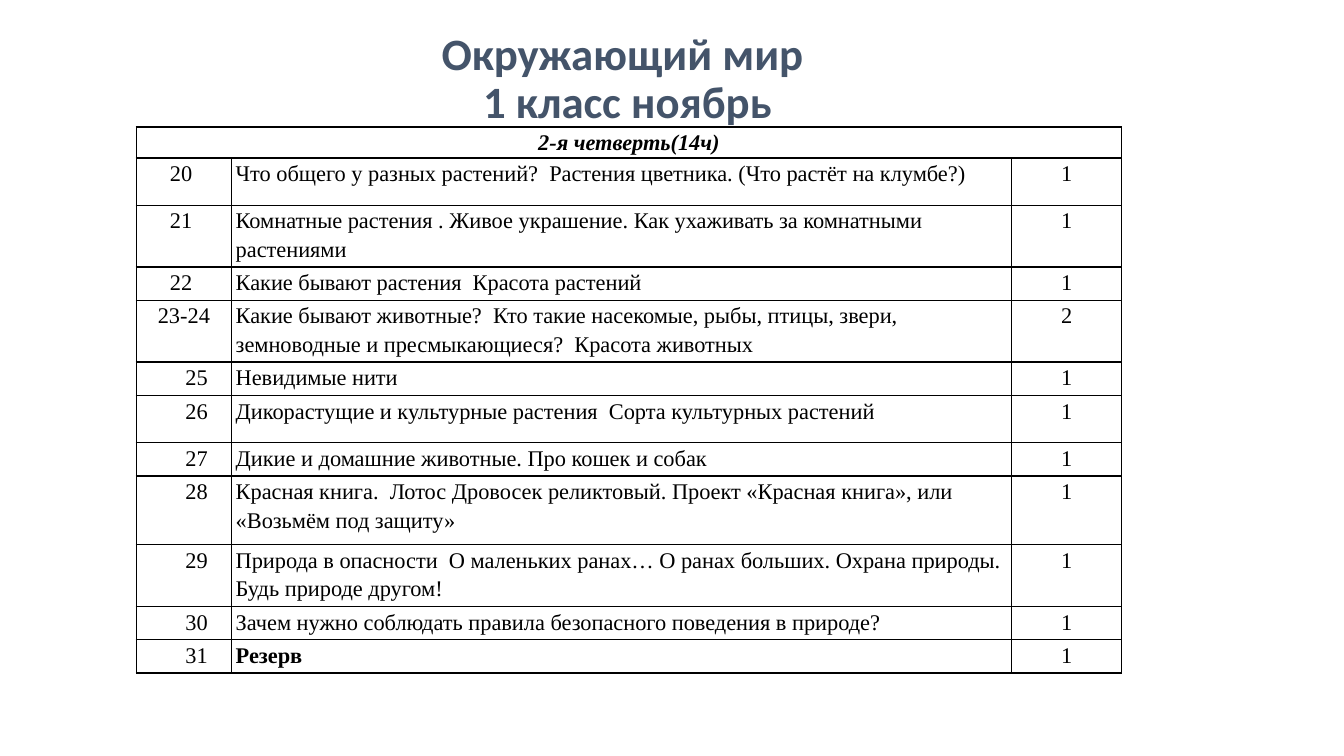
from dataclasses import dataclass

from lxml import etree
from pptx import Presentation
from pptx.dml.color import RGBColor
from pptx.enum.text import MSO_ANCHOR, PP_ALIGN
from pptx.oxml.ns import qn
from pptx.util import Cm, Pt

LEFT, CENTER = PP_ALIGN.LEFT, PP_ALIGN.CENTER
MIDDLE = MSO_ANCHOR.MIDDLE


@dataclass(frozen=True)
class Theme:
    title: str = "44546A"
    ink: str = "000000"
    head: str = "Calibri"
    body: str = "Times New Roman"
    big: int = 32
    small: int = 16
    rule: int = 1


@dataclass(frozen=True)
class Lesson:
    num: str
    topic: str
    hours: str = "1"
    high: float = 0.84
    shift: float = 0
    bold: bool = False


THEME = Theme()
SHIFT = 0.64
WIDTHS = (2.41, 19.66, 2.77)
TITLE = ("Окружающий мир ", "1 класс ноябрь")
TERM = "2-я четверть(14ч)"
LESSONS = (
    Lesson("20 ", "Что общего у разных растений?  Растения цветника. "
           "(Что растёт на клумбе?)", high=1.19),
    Lesson("21 ", "Комнатные растения . Живое украшение. "
           "Как ухаживать за комнатными растениями"),
    Lesson("22 ", "Какие бывают растения  Красота растений"),
    Lesson("23-24", "Какие бывают животные?  Кто такие насекомые, рыбы, птицы, "
           "звери, земноводные и пресмыкающиеся?  Красота животных", "2", 1.19),
    Lesson("25", "Невидимые нити", shift=SHIFT),
    Lesson("26", "Дикорастущие и культурные растения  Сорта культурных растений",
           high=1.19, shift=SHIFT),
    Lesson("27", "Дикие и домашние животные. Про кошек и собак", shift=SHIFT),
    Lesson("28", "Красная книга.  Лотос Дровосек реликтовый. "
           "Проект «Красная книга», или «Возьмём под защиту»",
           high=1.73, shift=SHIFT),
    Lesson("29", "Природа в опасности  О маленьких ранах… О ранах больших. "
           "Охрана природы. Будь природе другом!", high=1.4, shift=SHIFT),
    Lesson("30", "Зачем нужно соблюдать правила безопасного поведения в природе?",
           shift=SHIFT),
    Lesson("31", "Резерв", shift=SHIFT, bold=True),
)


def add_run(para, text: str, face: str, size: int, color: str,
            bold: bool = False, slant: bool = False) -> None:
    run = para.add_run()
    run.text = text
    font = run.font
    font.name, font.size = face, Pt(size)
    font.bold, font.italic = bold, slant
    font.color.rgb = RGBColor.from_string(color)


def add_rules(cell) -> None:
    props = cell._tc.get_or_add_tcPr()
    for side in ("a:lnL", "a:lnR", "a:lnT", "a:lnB"):
        line = etree.SubElement(props, qn(side), w=str(Pt(THEME.rule)))
        fill = etree.SubElement(line, qn("a:solidFill"))
        etree.SubElement(fill, qn("a:srgbClr"), val=THEME.ink)


def fill_cell(cell, text: str, align=CENTER, shift: float = 0,
              bold: bool = False, slant: bool = False) -> None:
    cell.margin_left = cell.margin_right = Cm(0.1)
    cell.margin_top = cell.margin_bottom = Cm(0)
    para = cell.text_frame.paragraphs[0]
    para.alignment = align
    para.line_spacing = 1.15
    para.space_after = Pt(10)
    if shift:
        props = para._p.get_or_add_pPr()
        props.set("marL", str(Cm(shift)))
        props.set("indent", "0")
    add_run(para, text, THEME.body, THEME.small, THEME.ink, bold, slant)


def add_title(slide) -> None:
    box = slide.shapes.add_textbox(Cm(7.49), Cm(0.18), Cm(16.66), Cm(3.68))
    frame = box.text_frame
    frame.word_wrap = True
    frame.vertical_anchor = MIDDLE
    para = frame.paragraphs[0]
    para.alignment = CENTER
    para.line_spacing = 0.9
    for i, text in enumerate(TITLE):
        if i:
            para.add_line_break()
        add_run(para, text, THEME.head, THEME.big, THEME.title, bold=True)


def add_plan(slide) -> None:
    highs = [0.3] + [item.high for item in LESSONS]
    table = slide.shapes.add_table(
        len(highs), len(WIDTHS), Cm(3.43), Cm(3.2),
        Cm(sum(WIDTHS)), Cm(sum(highs))).table
    table.first_row = table.horz_banding = False
    for col, width in zip(table.columns, WIDTHS):
        col.width = Cm(width)
    for row, high in zip(table.rows, highs):
        row.height = Cm(high)
    for cell in table.iter_cells():
        add_rules(cell)
        cell.fill.background()

    # Term heading across all columns
    first = table.cell(0, 0)
    first.merge(table.cell(0, len(WIDTHS) - 1))
    fill_cell(first, TERM, bold=True, slant=True)

    # One row per lesson
    for i, item in enumerate(LESSONS, 1):
        fill_cell(table.cell(i, 0), item.num, shift=item.shift)
        fill_cell(table.cell(i, 1), item.topic, LEFT, bold=item.bold)
        fill_cell(table.cell(i, 2), item.hours)


def main() -> None:
    deck = Presentation()
    deck.slide_width, deck.slide_height = Cm(33.87), Cm(19.05)
    slide = deck.slides.add_slide(deck.slide_layouts[6])
    add_title(slide)
    add_plan(slide)
    deck.save("out.pptx")


if __name__ == "__main__":
    main()
